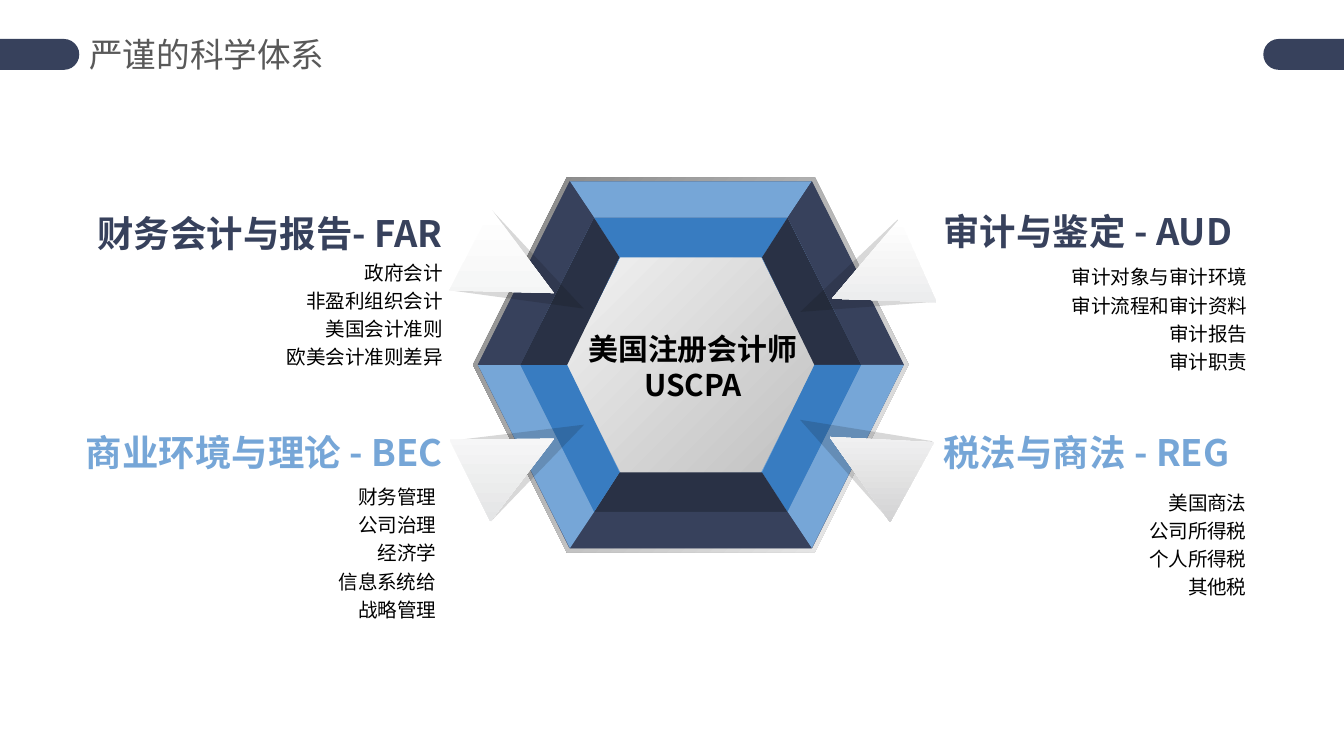
"""Build a slide with a faceted hexagon and four exam subjects around it."""
from typing import NamedTuple

from lxml import etree
from pptx import Presentation
from pptx import util as u
from pptx.dml.color import RGBColor
from pptx.enum import shapes, text
from pptx.oxml.ns import qn

FONT = "Noto Sans CJK SC"
NAVY, SKY, BLUE, INK = "37415C", "76A6D7", "387CC1", "293145"
COLUMNS = 100
CENTRE = (51.4, 27.15)
Kind = shapes.MSO_SHAPE
Anchor = text.MSO_ANCHOR
Align = text.PP_ALIGN


class Frame(NamedTuple):
    """Left, top, width and height in grid cells."""
    left: float
    top: float
    width: float
    height: float


class Ring(NamedTuple):
    """Half sizes of a hexagon in grid cells."""
    half_width: float
    half_height: float
    half_edge: float


class Style(NamedTuple):
    """Look of a block of text."""
    size: float
    color: str
    bold: bool = False
    align: Align = Align.LEFT
    spacing: float = 1.0


class Arrow(NamedTuple):
    """White arrow with its shadow, both turned by one angle."""
    shadow: Frame
    face: Frame
    angle: float
    end_color: str


class Subject(NamedTuple):
    """Exam subject with its heading and topics."""
    heading: str
    color: str
    align: Align
    heading_frame: Frame
    topics_frame: Frame
    topics: tuple[str, ...]


OUTER, MIDDLE, INNER = Ring(15.85, 13.65, 9), Ring(12.7, 10.95, 7.2), Ring(9.2, 8, 5.3)

ARROWS = (
    Arrow(Frame(60.3, 28.8, 6.7, 9.4), Frame(61.4, 30.7, 6.8, 7), 298.8, "D3D3D4"),
    Arrow(Frame(60.5, 16.6, 6.7, 9.4), Frame(61.7, 17.3, 6.8, 7), 246.1, "E2E3E4"),
    Arrow(Frame(35.9, 29, 6.7, 9.4), Frame(34.7, 30.7, 6.8, 7), 63.5, "E4E5E6"),
    Arrow(Frame(35.9, 16.1, 6.7, 9.4), Frame(34.7, 16.7, 6.8, 7), 117.4, "F0F1F1"),
)

SUBJECTS = (
    Subject("审计与鉴定 - AUD", NAVY, Align.LEFT,
            Frame(70.2, 15.55, 25.5, 3.3), Frame(67.3, 19.4, 25.5, 5),
            ("审计对象与审计环境", "审计流程和审计资料", "审计报告", "审计职责")),
    Subject("税法与商法 - REG", SKY, Align.LEFT,
            Frame(70.2, 32, 25.5, 3.3), Frame(67.25, 36.15, 25.5, 5),
            ("美国商法", "公司所得税", "个人所得税", "其他税")),
    Subject("财务会计与报告- FAR", NAVY, Align.RIGHT,
            Frame(7.45, 15.7, 25.5, 3.3), Frame(7.45, 19.05, 25.5, 5),
            ("政府会计", "非盈利组织会计", "美国会计准则", "欧美会计准则差异")),
    Subject("商业环境与理论 - BEC", SKY, Align.RIGHT,
            Frame(7.45, 32, 25.5, 3.3), Frame(6.95, 35.75, 25.5, 5),
            ("财务管理", "公司治理", "经济学", "信息系统给", "战略管理")),
)


def cells(count: float) -> u.Emu:
    """Turn grid cells into a length."""
    return u.Emu(round(count * u.Inches(10) / COLUMNS))


def rgb(color: str) -> RGBColor:
    """Turn a hex string into a colour."""
    return RGBColor.from_string(color)


def paint(shape, color: str, opacity: int = 100) -> None:
    """Give a shape a plain fill without line or shadow."""
    shape.shadow.inherit = False
    shape.line.fill.background()
    shape.fill.solid()
    shape.fill.fore_color.rgb = rgb(color)
    if opacity < 100:
        tint = shape.element.spPr.find(".//" + qn("a:srgbClr"))
        etree.SubElement(tint, qn("a:alpha")).set("val", str(opacity * 1000))


def shade(shape, start: str, end: str, angle: float) -> None:
    """Give a shape a gradient, clockwise, that stays still when it turns."""
    shape.shadow.inherit = False
    shape.line.fill.background()
    shape.fill.gradient()
    shape.fill.gradient_angle = 360 - angle
    for stop, color in zip(shape.fill.gradient_stops, (start, end)):
        stop.color.rgb = rgb(color)
    shape.element.spPr.find(qn("a:gradFill")).set("rotWithShape", "0")


def add_shape(page, kind: Kind, frame: Frame, angle: float = 0):
    """Add a preset shape on the grid."""
    shape = page.shapes.add_shape(kind, *map(cells, frame))
    shape.rotation = angle
    return shape


def add_hexagon(page, ring: Ring):
    """Add a hexagon around the common centre."""
    x, y = CENTRE
    return add_shape(page, Kind.HEXAGON, Frame(x - ring.half_width, y - ring.half_height,
                                               2 * ring.half_width, 2 * ring.half_height))


def corners(ring: Ring) -> list[tuple[int, int]]:
    """List the corners of a ring clockwise from the top left."""
    width, height, edge = ring
    offsets = ((-edge, -height), (edge, -height), (width, 0),
               (edge, height), (-edge, height), (-width, 0))
    return [(cells(CENTRE[0] + x), cells(CENTRE[1] + y)) for x, y in offsets]


def add_facets(page, outside: Ring, inside: Ring, colors: tuple[str, str]) -> None:
    """Fill the band between two rings with six facets of alternating colours."""
    far, near = corners(outside), corners(inside)
    for side in range(6):
        following = (side + 1) % 6
        builder = page.shapes.build_freeform(*far[side], scale=1.0)
        builder.add_line_segments([far[following], near[following], near[side]])
        paint(builder.convert_to_shape(), colors[side % 2])


def write(box, lines: tuple[str, ...], style: Style) -> None:
    """Write one paragraph per line in one style."""
    box.text_frame.text = "\n".join(lines)
    for para in box.text_frame.paragraphs:
        para.alignment = style.align
        para.line_spacing = style.spacing
        para.font.name = FONT
        para.font.size = u.Pt(style.size)
        para.font.bold = style.bold
        para.font.color.rgb = rgb(style.color)
        etree.SubElement(para.font._rPr, qn("a:ea")).set("typeface", FONT)


def set_frame(box, anchor: Anchor, wrap: bool, inset: float = 0) -> None:
    """Set the anchor, wrapping and vertical inset of a text body."""
    body = box.text_frame
    body.auto_size = text.MSO_AUTO_SIZE.NONE
    body.word_wrap, body.vertical_anchor = wrap, anchor
    body.margin_left = body.margin_right = 0
    body.margin_top = body.margin_bottom = cells(inset)


def add_text(page, frame: Frame, lines: tuple[str, ...], style: Style,
             anchor: Anchor = Anchor.TOP, wrap: bool = True, inset: float = 0) -> None:
    """Add a text box on the grid."""
    box = page.shapes.add_textbox(*map(cells, frame))
    set_frame(box, anchor, wrap, inset)
    write(box, lines, style)


def add_header(page) -> None:
    """Place the title between two rounded tabs."""
    title = page.shapes.title
    title.left, title.top, title.width, title.height = map(cells, Frame(6.65, 1.9, 23.3, 4.2))
    set_frame(title, Anchor.MIDDLE, True, 0.5)
    write(title, ("严谨的科学体系",), Style(18, "595959"))
    for left in (-2.8, 94):
        tab = add_shape(page, Kind.ROUNDED_RECTANGLE, Frame(left, 2.9, 8.7, 2.3))
        tab.adjustments[0] = 0.5
        paint(tab, NAVY)


def main() -> None:
    """Build and save the deck."""
    deck = Presentation()
    deck.slide_width = u.Inches(10)
    deck.slide_height = deck.slide_width * 9 // 16
    page = deck.slides.add_slide(deck.slide_layouts[5])
    add_header(page)
    shade(add_hexagon(page, Ring(16.2, 13.95, 9.2)), "808080", "F2F2F2", 45)
    paint(add_hexagon(page, OUTER), NAVY)
    paint(add_hexagon(page, MIDDLE), SKY)
    shade(add_hexagon(page, INNER), "BFBFBF", "F2F2F2", 225)
    add_facets(page, MIDDLE, INNER, (BLUE, INK))
    add_facets(page, OUTER, MIDDLE, (SKY, NAVY))
    for arrow in ARROWS:
        paint(add_shape(page, Kind.ISOSCELES_TRIANGLE, arrow.shadow, arrow.angle), "0D0D0D", 16)
        face = add_shape(page, Kind.ISOSCELES_TRIANGLE, arrow.face, arrow.angle)
        shade(face, "FFFFFF", arrow.end_color, 90)
    add_text(page, Frame(44.5, 24.15, 14.1, 10.7), ("美国注册会计师", "USCPA"),
             Style(16, "000000", True, Align.CENTER), wrap=False, inset=0.5)
    for subject in SUBJECTS:
        add_text(page, subject.heading_frame, (subject.heading,),
                 Style(19.5, subject.color, True, subject.align), Anchor.MIDDLE, False)
        add_text(page, subject.topics_frame, subject.topics,
                 Style(10.5, "000000", align=Align.RIGHT, spacing=1.2))
    deck.save("out.pptx")


if __name__ == "__main__":
    main()
